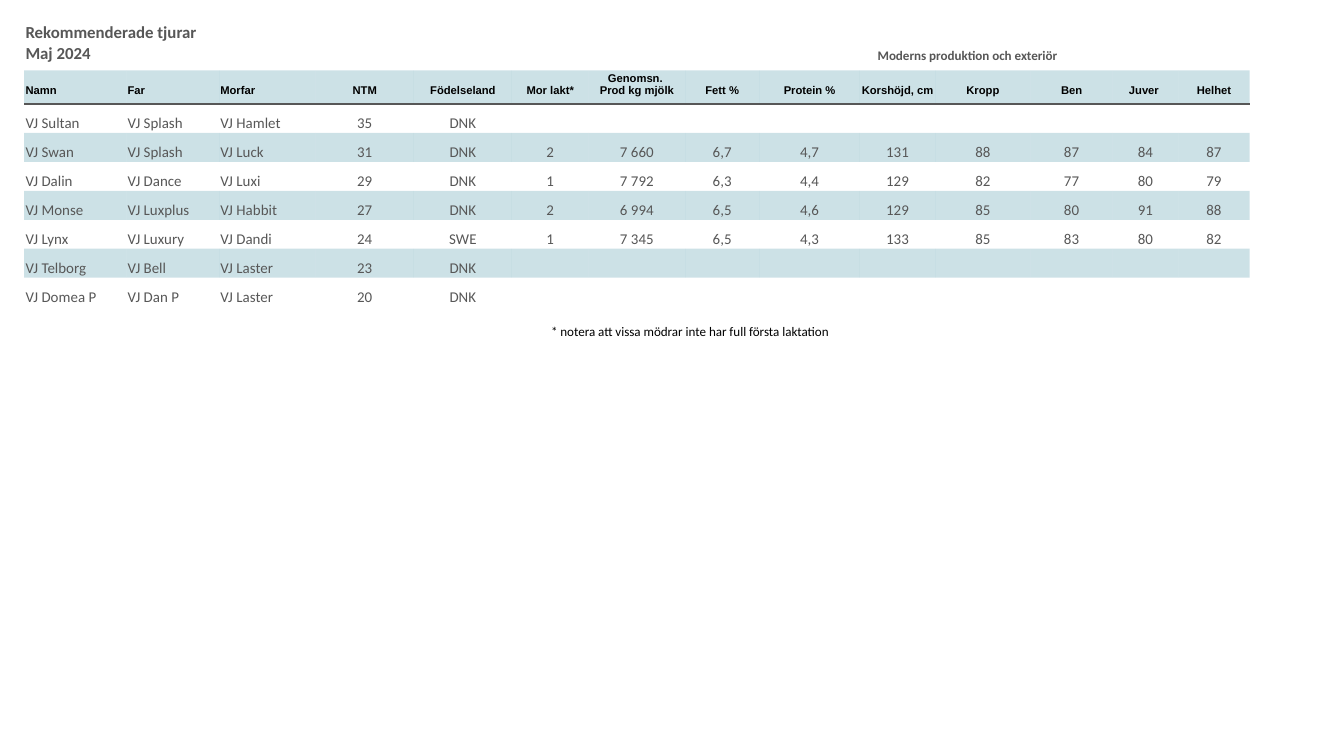
"""Build a slide with a table of recommended bulls and a footnote."""
import dataclasses
import typing

import lxml.etree
import pptx
import pptx.dml.color
import pptx.enum.text
import pptx.oxml.ns
import pptx.util

Inches = pptx.util.Inches
qn = pptx.oxml.ns.qn
LEFT = pptx.enum.text.PP_ALIGN.LEFT
CENTER = pptx.enum.text.PP_ALIGN.CENTER

COLORS = {"text": "575757", "black": "000000", "band": "006B85", "rule": "575757"}
NO_GRID_STYLE = "{2D5ABB26-0587-4C30-8999-92F81FD0307C}"
SLIDE_WIDTH = Inches(10)
SLIDE_HEIGHT = SLIDE_WIDTH * 9 // 16
BAND_OPACITY = 20
RULE_WIDTH = 1
LEFT_COLUMNS = 3
TITLE_HEIGHT = 0.36
LABEL_HEIGHT = 0.25
BODY_HEIGHT = 1.51

COLUMN_WIDTHS = [0.76, 0.69, 0.72, 0.73, 0.73, 0.57, 0.72, 0.55, 0.75, 0.56, 0.71, 0.61, 0.49, 0.53]
LABELS = ["Namn", "Far", "Morfar", "NTM", "Födelseland", "Mor lakt*", "Genomsn. \vProd kg mjölk", "Fett %",
          "Protein %", "Korshöjd, cm", "Kropp", "Ben", "Juver ", "Helhet"]
BULLS = [
    ["VJ Sultan", "VJ Splash", "VJ Hamlet", "35", "DNK"],
    ["VJ Swan", "VJ Splash", "VJ Luck", "31", "DNK", "2", "7 660", "6,7", "4,7", "131", "88", "87", "84", "87"],
    ["VJ Dalin", "VJ Dance", "VJ Luxi", "29", "DNK", "1", "7 792", "6,3", "4,4", "129", "82", "77", "80", "79"],
    ["VJ Monse", "VJ Luxplus", "VJ Habbit", "27", "DNK", "2", "6 994", "6,5", "4,6", "129", "85", "80", "91", "88"],
    ["VJ Lynx", "VJ Luxury", "VJ Dandi", "24", "SWE", "1", "7 345", "6,5", "4,3", "133", "85", "83", "80", "82"],
    ["VJ Telborg", "VJ Bell", "VJ Laster", "23", "DNK"],
    ["VJ Domea P", "VJ Dan P", "VJ Laster", "20", "DNK"],
]


@dataclasses.dataclass(frozen=True)
class CellStyle:
    """Text look and bottom margin of a cell."""
    size: int
    font: str = "Calibri"
    color: str = "text"
    bold: bool = False
    bottom: float = 0.05


TITLE = CellStyle(9, bold=True)
GROUP = CellStyle(7, bold=True)
LABEL = CellStyle(6, font="Arial", color="black", bold=True)
BODY = CellStyle(8, bottom=0)
NOTE = CellStyle(7, color="black")


def apply_format(target: typing.Any, values: dict[str, typing.Any]) -> None:
    """Set every named attribute on the target."""
    for name, value in values.items():
        setattr(target, name, value)


def write_cell(cell: typing.Any, text: str, style: CellStyle, alignment: typing.Any = LEFT) -> None:
    """Write styled text and clear the fill of a cell."""
    apply_format(cell, {
        "text": text,
        "vertical_anchor": pptx.enum.text.MSO_ANCHOR.BOTTOM,
        "margin_left": Inches(0.01),
        "margin_right": Inches(0.01),
        "margin_top": Inches(0.01),
        "margin_bottom": Inches(style.bottom),
    })
    cell.fill.background()
    paragraph = cell.text_frame.paragraphs[0]
    paragraph.alignment = alignment
    for run in paragraph.runs:
        apply_format(run.font, {"size": pptx.util.Pt(style.size), "name": style.font, "bold": style.bold})
        run.font.color.rgb = pptx.dml.color.RGBColor.from_string(COLORS[style.color])
    if not text:
        ending = lxml.etree.SubElement(paragraph._p, qn("a:endParaRPr"))
        ending.set("sz", str(style.size * 100))


def shade_cell(cell: typing.Any) -> None:
    """Fill a cell with the translucent band colour."""
    cell.fill.solid()
    cell.fill.fore_color.rgb = pptx.dml.color.RGBColor.from_string(COLORS["band"])
    color = cell._tc.tcPr.find(f".//{qn('a:srgbClr')}")
    lxml.etree.SubElement(color, qn("a:alpha")).set("val", str(BAND_OPACITY * 1000))


def rule_cell(cell: typing.Any, tag: str, visible: bool = True) -> None:
    """Draw or clear one border of a cell."""
    line = lxml.etree.Element(qn(tag))
    if visible:
        line.set("w", str(pptx.util.Pt(RULE_WIDTH)))
        fill = lxml.etree.SubElement(line, qn("a:solidFill"))
        lxml.etree.SubElement(fill, qn("a:srgbClr")).set("val", COLORS["rule"])
    else:
        lxml.etree.SubElement(line, qn("a:noFill"))
    cell._tc.get_or_add_tcPr().insert(0, line)


def add_plain_table(slide: typing.Any, left: float, top: float, widths: list[float],
                    heights: list[float]) -> typing.Any:
    """Add a table without grid or banding."""
    frame = slide.shapes.add_table(len(heights), len(widths), Inches(left), Inches(top),
                                   Inches(sum(widths)), Inches(sum(heights)))
    table = frame.table
    apply_format(table, {"first_row": False, "horz_banding": False})
    table._tbl.tblPr.find(qn("a:tableStyleId")).text = NO_GRID_STYLE
    for column, width in zip(table.columns, widths):
        column.width = Inches(width)
    for row, height in zip(table.rows, heights):
        row.height = Inches(height)
    return table


def add_bull_table(slide: typing.Any) -> None:
    """Add the table of bulls with its two heading rows."""
    heights = [TITLE_HEIGHT, LABEL_HEIGHT] + [BODY_HEIGHT / len(BULLS)] * len(BULLS)
    table = add_plain_table(slide, 0.18, 0.16, COLUMN_WIDTHS, heights)
    headings = {0: ("Rekommenderade tjurar Maj 2024", TITLE, LEFT),
                7: ("Moderns produktion och exteriör", GROUP, CENTER)}
    for column in range(len(COLUMN_WIDTHS)):
        write_cell(table.cell(0, column), *headings.get(column, ("", BODY, LEFT)))
    for first, last in ((0, 1), (5, 6), (7, 13)):
        table.cell(0, first).merge(table.cell(0, last))
    for row, values in enumerate([LABELS] + BULLS, start=1):
        padded = values + [""] * (len(COLUMN_WIDTHS) - len(values))
        for column, text in enumerate(padded):
            cell = table.cell(row, column)
            write_cell(cell, text, LABEL if row == 1 else BODY, LEFT if column < LEFT_COLUMNS else CENTER)
            if row % 2:
                shade_cell(cell)
            rule_cell(cell, "a:lnB", visible=row == 1)
            if row == 2:
                rule_cell(cell, "a:lnT")
            elif row > 2:
                rule_cell(cell, "a:lnT", visible=False)


def main() -> None:
    """Create and save the presentation."""
    presentation = pptx.Presentation()
    apply_format(presentation, {"slide_width": SLIDE_WIDTH, "slide_height": SLIDE_HEIGHT})
    slide = presentation.slides.add_slide(presentation.slide_layouts[6])
    add_bull_table(slide)
    note = add_plain_table(slide, 4.09, 2.36, [3.58], [0.22])
    write_cell(note.cell(0, 0), "* notera att vissa mödrar inte har full första laktation", NOTE)
    presentation.save("out.pptx")


if __name__ == "__main__":
    main()
